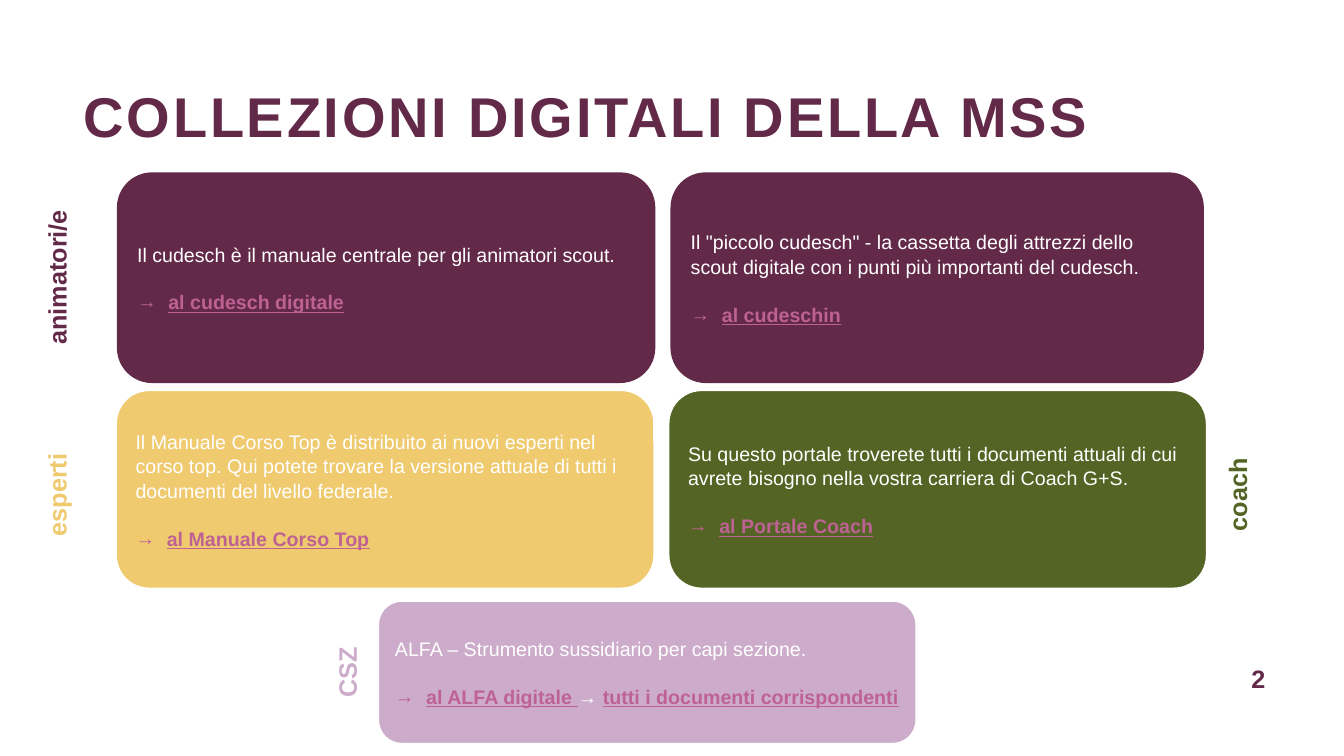
from lxml.etree import SubElement
from pptx import Presentation
from pptx.dml.color import RGBColor
from pptx.enum.shapes import MSO_SHAPE
from pptx.enum.text import MSO_ANCHOR, PP_ALIGN
from pptx.oxml.ns import qn
from pptx.util import Pt

EMU_PER_PX = 9144  # 100 px to the inch
FONT = "Arial"
COLORS = {
    "plum": "632949",
    "sand": "EFCA6E",
    "olive": "536424",
    "lilac": "CCACCA",
    "link": "BE6294",
    "white": "FFFFFF",
}
LINK_INDENT = 31
LABEL_LENGTH, LABEL_HEIGHT = 209, 30

# box, fill, outlined, description, link line as (words, is a link)
CARDS = [
    ((665, 171, 529, 209), "plum", False,
     'Il "piccolo cudesch" - la cassetta degli attrezzi dello scout digitale '
     "con i punti più importanti del cudesch.",
     [("al cudeschin", True)]),
    ((116, 171, 534, 209), "plum", False,
     "Il cudesch è il manuale centrale per gli animatori scout.",
     [("al cudesch digitale", True)]),
    ((115, 387, 534, 197), "sand", True,
     "Il Manuale Corso Top è distribuito ai nuovi esperti nel corso top. "
     "Qui potete trovare la versione attuale di tutti i documenti del livello federale.",
     [("al Manuale Corso Top", True)]),
    ((663, 387, 534, 197), "olive", True,
     "Su questo portale troverete tutti i documenti attuali di cui avrete "
     "bisogno nella vostra carriera di Coach G+S.",
     [("al Portale Coach", True)]),
    ((375, 596, 534, 142), "lilac", True,
     "ALFA – Strumento sussidiario per capi sezione.",
     [("al ALFA digitale ", True), ("→ ", False),
      ("tutti i documenti corrispondenti", True)]),
]

# words, colour, centre
LABELS = [
    ("animatori/e", "plum", (56, 275)),
    ("esperti", "sand", (56, 491)),
    ("coach", "olive", (1227, 491)),
    ("CSZ", "lilac", (344, 667)),
]


def px(length):
    return round(length * EMU_PER_PX)


def rgb(color):
    return RGBColor.from_string(COLORS[color])


def style(run, size, color, bold=False, underline=False):
    font = run.font
    font.name, font.size, font.bold = FONT, Pt(size), bold
    font.underline = underline
    font.color.rgb = rgb(color)


def clear_margins(frame):
    frame.margin_left = frame.margin_right = 0
    frame.margin_top = frame.margin_bottom = 0


def add_arrow_bullet(paragraph):
    properties = paragraph._p.get_or_add_pPr()
    properties.set("marL", str(px(LINK_INDENT)))
    properties.set("indent", str(-px(LINK_INDENT)))
    bullet_color = SubElement(properties, qn("a:buClr"))
    SubElement(bullet_color, qn("a:srgbClr"), val=COLORS["link"])
    SubElement(properties, qn("a:buFont"), typeface=FONT)
    SubElement(properties, qn("a:buChar"), char="→")


def place_title(slide, box):
    title = slide.shapes.title
    title.left, title.top, title.width, title.height = map(px, box)
    frame = title.text_frame
    frame.text = "COLLEZIONI DIGITALI DELLA MSS"
    frame.word_wrap = True
    frame.vertical_anchor = MSO_ANCHOR.MIDDLE
    clear_margins(frame)
    heading = frame.paragraphs[0]
    heading.alignment = PP_ALIGN.LEFT
    style(heading.runs[0], 40, "plum", bold=True)
    heading.runs[0].font._element.set("spc", "200")


def add_card(slide, box, fill, outlined, description, link_line):
    card = slide.shapes.add_shape(MSO_SHAPE.ROUNDED_RECTANGLE, *map(px, box))
    card.shadow.inherit = False
    card.fill.solid()
    card.fill.fore_color.rgb = rgb(fill)
    if outlined:
        card.line.color.rgb = rgb("white")
        card.line.width = Pt(1.5)
    else:
        card.line.fill.background()

    frame = card.text_frame
    frame.word_wrap = True
    frame.vertical_anchor = MSO_ANCHOR.MIDDLE
    frame.margin_right = px(8)
    frame.text = description
    intro = frame.paragraphs[0]
    style(intro.runs[0], 14, "white")

    links = frame.add_paragraph()
    add_arrow_bullet(links)
    links.space_before = Pt(16.8)
    for words, is_link in link_line:
        run = links.add_run()
        run.text = words
        style(run, 14, "link" if is_link else "white", bold=True, underline=is_link)
    for paragraph in (intro, links):
        paragraph.alignment = PP_ALIGN.LEFT
        paragraph.line_spacing = 1.04


def add_caption(slide, box, words, color, alignment, anchor):
    caption = slide.shapes.add_textbox(*map(px, box))
    frame = caption.text_frame
    frame.word_wrap = True
    frame.vertical_anchor = anchor
    clear_margins(frame)
    frame.text = words
    frame.paragraphs[0].alignment = alignment
    style(frame.paragraphs[0].runs[0], 18, color, bold=True)
    return caption


def add_side_label(slide, words, color, center):
    """Add a label that reads upwards, around its centre."""
    x, y = center
    box = (x - LABEL_LENGTH / 2, y - LABEL_HEIGHT / 2, LABEL_LENGTH, LABEL_HEIGHT)
    label = add_caption(slide, box, words, color, PP_ALIGN.CENTER, MSO_ANCHOR.TOP)
    label.rotation = 270


def main():
    deck = Presentation()
    deck.slide_width, deck.slide_height = px(1333), px(750)
    slide = deck.slides.add_slide(deck.slide_layouts[5])
    place_title(slide, (83, 58, 1040, 113))
    for card in CARDS:
        add_card(slide, *card)
    for label in LABELS:
        add_side_label(slide, *label)
    add_caption(slide, (1196, 661, 59, 27), "2", "plum", PP_ALIGN.RIGHT, MSO_ANCHOR.BOTTOM)
    deck.save("out.pptx")


if __name__ == "__main__":
    main()
